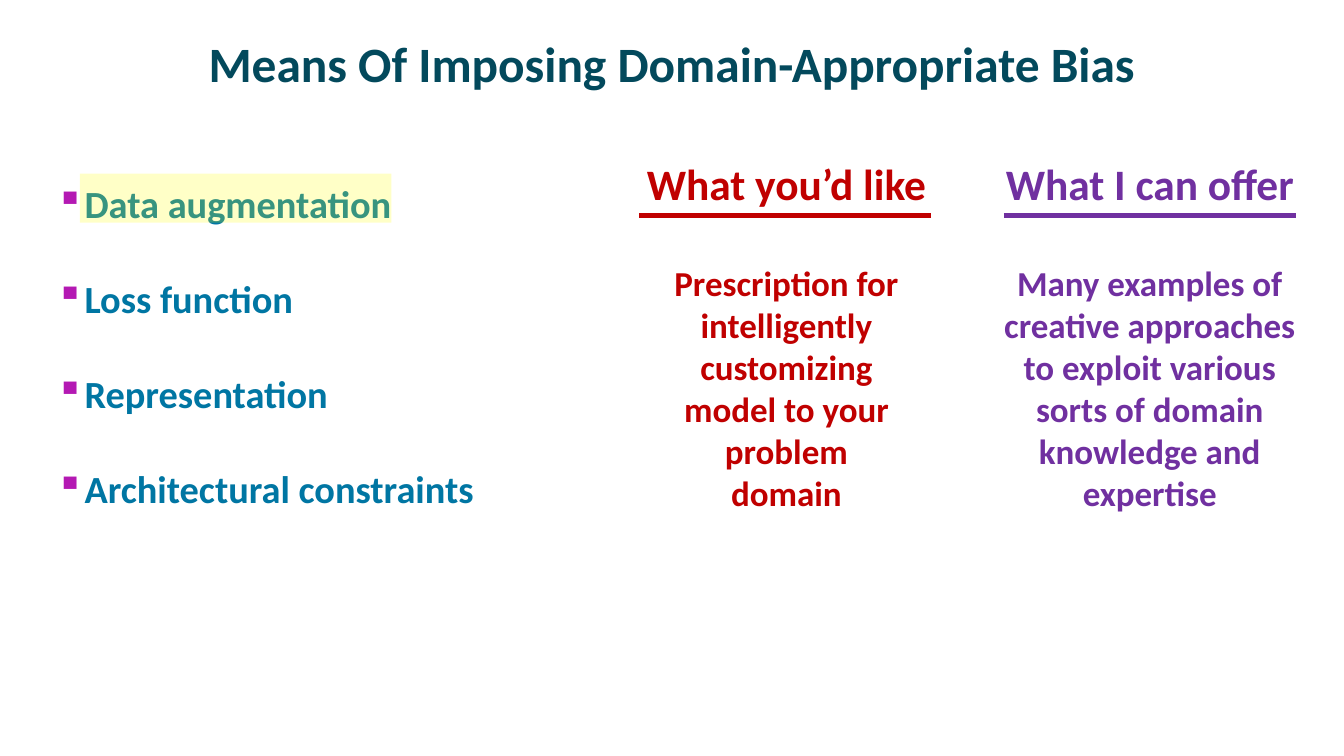
"""Build the slide on means of imposing domain-appropriate bias."""
from lxml.etree import SubElement
from pptx import Presentation
from pptx.dml.color import RGBColor
from pptx.enum.shapes import MSO_CONNECTOR, MSO_SHAPE
from pptx.enum.text import MSO_ANCHOR, PP_ALIGN
from pptx.oxml.ns import qn
from pptx.util import Pt

COLORS = {
    "title": "03495C",
    "means": "0076A3",
    "bullet": "B419B3",
    "highlight": "FFFF00",
    "like": "C00000",
    "offer": "7030A0",
}


def add_box(left, top, width, height, **frame_format):
    frame = slide.shapes.add_textbox(Pt(left), Pt(top), Pt(width), Pt(height)).text_frame
    for name, value in {"word_wrap": True, **frame_format}.items():
        setattr(frame, name, value)
    return frame


def write(paragraph, text, size, color, **paragraph_format):
    paragraph.text = text
    for name, value in paragraph_format.items():
        setattr(paragraph, name, value)
    for run in paragraph.runs:
        for name, value in {"name": "Calibri", "size": Pt(size), "bold": True}.items():
            setattr(run.font, name, value)
        run.font.color.rgb = RGBColor.from_string(COLORS[color])


presentation = Presentation()
presentation.slide_width = Pt(960)
presentation.slide_height = Pt(540)
slide = presentation.slides.add_slide(presentation.slide_layouts[6])

title = add_box(48, 12, 864, 66, vertical_anchor=MSO_ANCHOR.MIDDLE)
write(title.paragraphs[0], "Means Of Imposing Domain-Appropriate Bias", 35.3, "title",
      alignment=PP_ALIGN.CENTER)

means = add_box(32, 108, 400, 374, margin_left=Pt(8), margin_top=Pt(4))
for index, mean in enumerate(
    ["Data augmentation", "Loss function", "Representation", "Architectural constraints"]
):
    item = means.add_paragraph() if index else means.paragraphs[0]
    properties = item._p.get_or_add_pPr()
    properties.set("marL", str(Pt(15)))
    properties.set("indent", str(-Pt(15)))
    bullet_color = SubElement(properties, qn("a:buClr"))
    SubElement(bullet_color, qn("a:srgbClr"), val=COLORS["bullet"])
    SubElement(properties, qn("a:buChar"), char="▪")
    write(item, mean, 27.4, "means", line_spacing=1.5,
          space_before=Pt(18.5 if index else 0))

highlight = slide.shapes.add_shape(MSO_SHAPE.RECTANGLE, Pt(57), Pt(124), Pt(222.5), Pt(35))
highlight.shadow.inherit = False
highlight.line.fill.background()
highlight.fill.solid()
highlight.fill.fore_color.rgb = RGBColor.from_string(COLORS["highlight"])
highlight_color = highlight._element.spPr.find(qn("a:solidFill")).find(qn("a:srgbClr"))
SubElement(highlight_color, qn("a:alpha"), val="22000")

columns = [
    ("like", 440, 243.5, 456.5, "What you’d like",
     ["Prescription for", "intelligently customizing", "model to your problem", "domain"]),
    ("offer", 708.5, 225.5, 717, "What I can offer",
     ["Many examples of\ncreative approaches\nto exploit various",
      "sorts of domain\nknowledge and\nexpertise"]),
]
for color, left, width, rule_left, heading, lines in columns:
    column = add_box(left, 108.5, width, 264)
    write(column.paragraphs[0], heading, 31, color, alignment=PP_ALIGN.CENTER)
    for index, line in enumerate(lines):
        write(column.add_paragraph(), line, 25, color, alignment=PP_ALIGN.CENTER,
              space_before=Pt(0 if index else 37.8))

for color, left, width, rule_left, heading, lines in columns:
    rule = slide.shapes.add_connector(
        MSO_CONNECTOR.STRAIGHT, Pt(rule_left), Pt(154), Pt(rule_left + 208.5), Pt(154)
    )
    rule.line.width = Pt(4)
    rule.line.color.rgb = RGBColor.from_string(COLORS[color])
    SubElement(rule._element.spPr, qn("a:effectLst"))

presentation.save("out.pptx")
